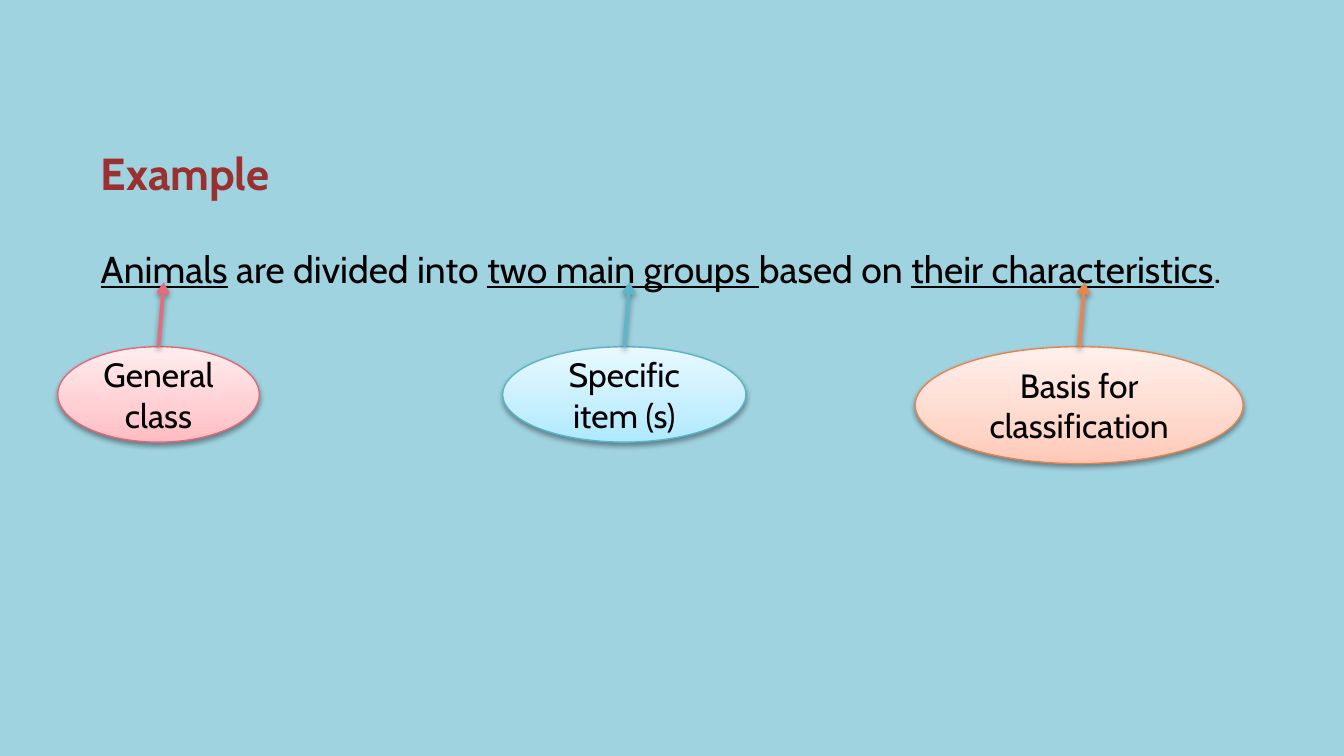
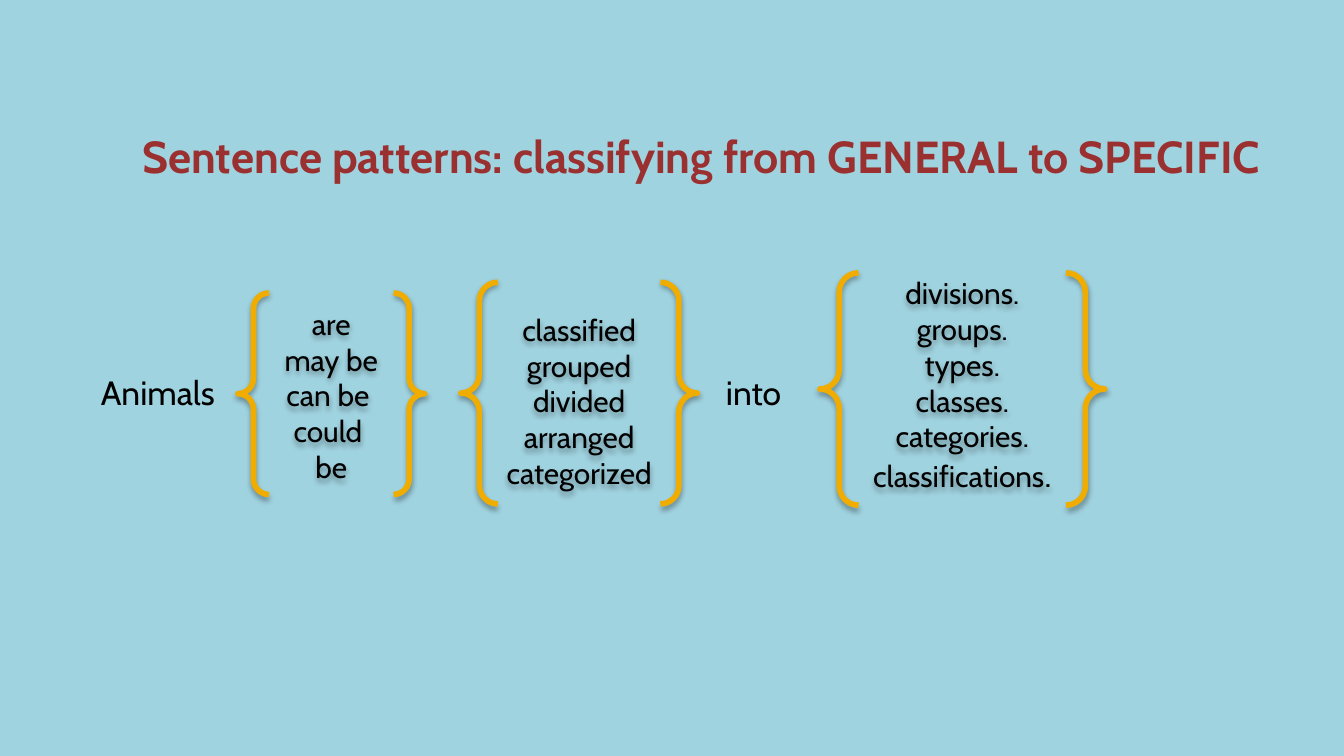
from copy import deepcopy

from lxml import etree
from pptx import Presentation
from pptx.dml.color import RGBColor
from pptx.enum import shapes, text
from pptx.oxml import ns
from pptx.util import Inches, Pt

FONT = "Cabin"
BACKGROUND, TITLE, INK, BRACE = "A0D3E0", "9A3130", "000000", "F0AD00"
LEFT, TEXT_INSET = 0.67, (0.08, 0.04, 0.08, 0.04)
ELLIPSE_INSET = (0.1, 0.05, 0.1, 0.05)
CENTER = text.PP_ALIGN.CENTER
TOP, MIDDLE, BOTTOM = text.MSO_ANCHOR.TOP, text.MSO_ANCHOR.MIDDLE, text.MSO_ANCHOR.BOTTOM


def rgb(color):
    return RGBColor.from_string(color)


def new_slide(prs):
    slide = prs.slides.add_slide(prs.slide_layouts[6])
    fill = slide.background.fill
    fill.solid()
    fill.fore_color.rgb = rgb(BACKGROUND)
    return slide


def add_run(p, words, size, color=INK, bold=False, underline=False):
    r = p.add_run()
    r.text = words
    f = r.font
    f.name, f.size, f.bold, f.underline = FONT, Pt(size), bold, underline
    f.color.rgb = rgb(color)


def set_frame(tf, insets=TEXT_INSET, anchor=TOP):
    tf.word_wrap = True
    tf.vertical_anchor = anchor
    tf.margin_left, tf.margin_top, tf.margin_right, tf.margin_bottom = map(Inches, insets)


def add_text(slide, box, align=text.PP_ALIGN.LEFT):
    tf = slide.shapes.add_textbox(*map(Inches, box)).text_frame
    set_frame(tf)
    tf.auto_size = text.MSO_AUTO_SIZE.SHAPE_TO_FIT_TEXT
    p = tf.paragraphs[0]
    p.alignment = align
    return p


def add_title(slide, box, words):
    p = add_text(slide, box)
    add_run(p, words, 24, TITLE, bold=True)
    return p


def add_shadow(s, alpha, distance):
    spPr = s._element.spPr
    for old in spPr.findall(ns.qn("a:effectLst")):
        spPr.remove(old)
    effects = etree.SubElement(spPr, ns.qn("a:effectLst"))
    shadow = etree.SubElement(effects, ns.qn("a:outerShdw"), blurRad=str(Pt(3.1)),
                              dist=str(Pt(distance)), dir="5400000", rotWithShape="0")
    color = etree.SubElement(shadow, ns.qn("a:srgbClr"), val="000000")
    etree.SubElement(color, ns.qn("a:alpha"), val=str(alpha * 1000))


def set_line(s, color, width):
    s.line.color.rgb = rgb(color)
    s.line.width = Pt(width)


def set_gradient(s, colors):
    s.fill.gradient()
    s.fill.gradient_angle = 90
    first = s._element.spPr.xpath(".//a:gs")[0]
    first.addnext(deepcopy(first))
    for stop, color, position in zip(s.fill.gradient_stops, colors, (0, 0.35, 1)):
        stop.color.rgb = rgb(color)
        stop.position = position


def add_callout(slide, box, label, gradient, outline, arrow):
    left, top, width, _ = box
    s = slide.shapes.add_shape(shapes.MSO_SHAPE.OVAL, *map(Inches, box))
    set_gradient(s, gradient)
    set_line(s, outline, 0.75)
    add_shadow(s, 38, 1.6)
    set_frame(s.text_frame, ELLIPSE_INSET, MIDDLE)
    p = s.text_frame.paragraphs[0]
    p.alignment = CENTER
    add_run(p, label, 18)

    x = left + width / 2
    c = slide.shapes.add_connector(shapes.MSO_CONNECTOR.STRAIGHT, Inches(x), Inches(top),
                                   Inches(x + 0.04), Inches(top - 0.48))
    c.begin_connect(s, 0)
    set_line(c, arrow, 2)
    etree.SubElement(c.line._get_or_add_ln(), ns.qn("a:tailEnd"), type="arrow")
    add_shadow(c, 38, 1.6)


def add_choices(slide, box, choices, anchor=BOTTOM):
    s = slide.shapes.add_shape(shapes.MSO_SHAPE.DOUBLE_BRACE, *map(Inches, box))
    s.fill.background()
    set_line(s, BRACE, 3)
    add_shadow(s, 35, 1.8)
    tf = s.text_frame
    set_frame(tf, anchor=anchor)
    for i, choice in enumerate(choices):
        p = tf.add_paragraph() if i else tf.paragraphs[0]
        p.alignment = CENTER
        add_run(p, choice, 16)
    return tf


def example_slide(prs):
    slide = new_slide(prs)
    p = add_text(slide, (LEFT, 1.79, 8.86, 0.41))
    for words, underline in (
        ("Animals", True),
        (" are divided into ", False),
        ("two main groups ", True),
        ("based on ", False),
        ("their characteristics", True),
        (".", False),
    ):
        add_run(p, words, 20, underline=underline)
    title = add_title(slide, (LEFT, 1, 1.73, 0.53), "Example")
    add_run(title, " ", 27, TITLE, bold=True)

    for left, width, height, label, gradient, outline, arrow in (
        (0.43, 1.5, 0.71, "General class", ("FFBCC2", "FFCFD3", "FFEDEE"), "E46778", "E66C7D"),
        (3.74, 1.81, 0.71, "Specific item (s)", ("ADE9FF", "C5EFFF", "E9F9FF"), "5BB3CA", "60B5CC"),
        (6.81, 2.44, 0.87, "Basis for classification", ("FFC8B7", "FFD8CC", "FFF0EC"), "E7824C", "E88651"),
    ):
        add_callout(slide, (left, 2.58, width, height), label, gradient, outline, arrow)


def patterns_slide(prs):
    slide = new_slide(prs)
    add_title(slide, (0.98, 0.92, 8.58, 0.48),
              "Sentence patterns: classifying from GENERAL to SPECIFIC")
    add_run(add_text(slide, (LEFT, 2.73, 1.02, 0.38)), "Animals", 18)
    add_choices(slide, (3.43, 2.1, 1.76, 1.65),
                ("classified", "grouped", "divided", "arranged", "categorized"), TOP)
    add_choices(slide, (1.77, 2.18, 1.39, 1.5),
                ("are", "may be", "can be ", "could ", "be"))
    add_run(add_text(slide, (5.24, 2.73, 0.79, 0.38), CENTER), "into ", 18)
    tf = add_choices(slide, (6.1, 2.03, 2.12, 1.73),
                     ("divisions.", "groups.", "types.", "classes.", "categories.", "classifications"))
    add_run(tf.paragraphs[-1], ".", 18)


def main():
    prs = Presentation()
    prs.slide_width = Inches(10)
    prs.slide_height = prs.slide_width * 9 // 16
    example_slide(prs)
    patterns_slide(prs)
    prs.save("out.pptx")


if __name__ == "__main__":
    main()
